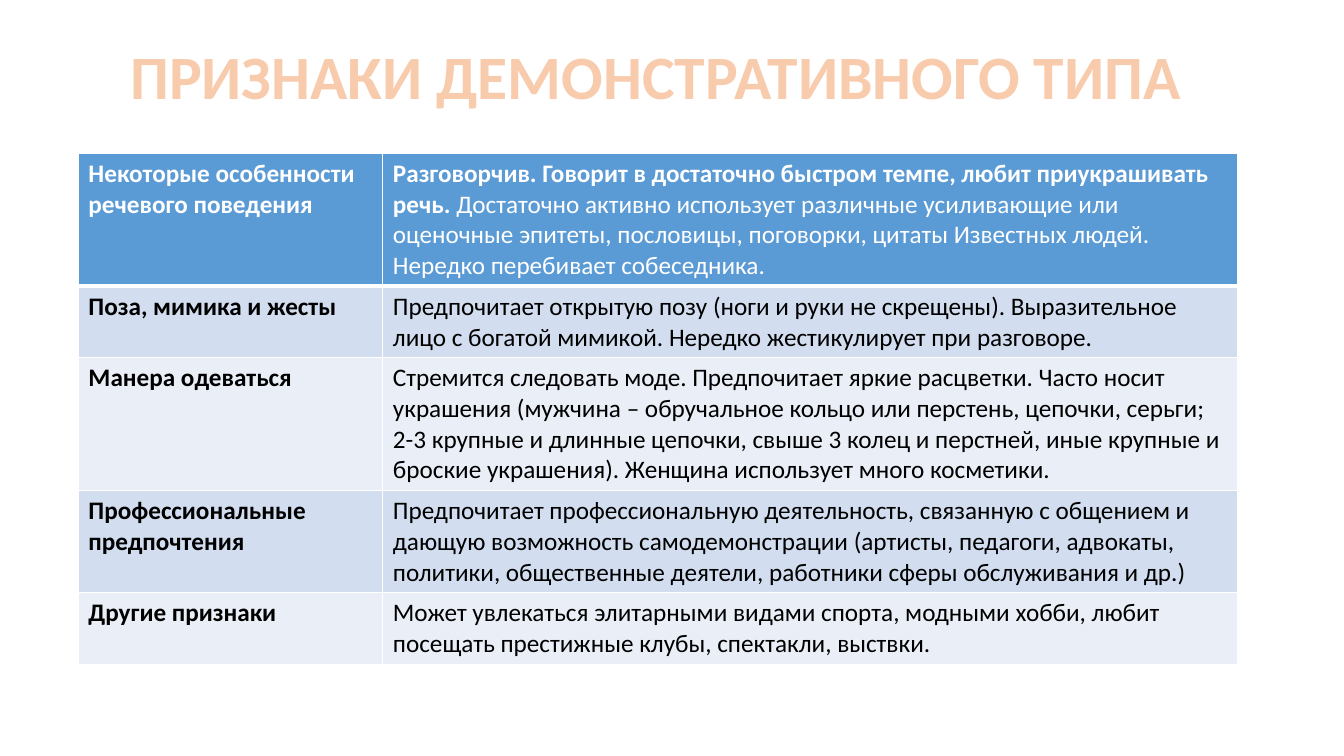
from lxml import etree
from pptx import Presentation
from pptx import util as u
from pptx.dml.color import RGBColor
from pptx.enum import text
from pptx.oxml import ns

COLORS = {
    "title": "F8CBAD", "title_outline": "ED7D31",
    "header": "5B9BD5", "band_dark": "D2DEEF", "band_light": "EAEFF7",
    "white": "FFFFFF", "black": "000000",
}

TITLE = "ПРИЗНАКИ ДЕМОНСТРАТИВНОГО ТИПА"

# Each trait: label, description as (text, bold) runs, number of text lines
TRAITS = [
    ("Некоторые особенности речевого поведения",
     [("Разговорчив. Говорит в достаточно быстром темпе, любит приукрашивать речь. ", True),
      ("Достаточно активно использует различные усиливающие или оценочные эпитеты, "
       "пословицы, поговорки, цитаты Известных людей. Нередко перебивает собеседника.", False)], 4),
    ("Поза, мимика и жесты",
     [("Предпочитает открытую позу (ноги и руки не скрещены). Выразительное лицо "
       "с богатой мимикой. Нередко жестикулирует при разговоре.", False)], 2),
    ("Манера одеваться",
     [("Стремится следовать моде. Предпочитает яркие расцветки. Часто носит украшения "
       "(мужчина – обручальное кольцо или перстень, цепочки, серьги; 2-3 крупные и длинные "
       "цепочки, свыше 3 колец и перстней, иные крупные и броские украшения). "
       "Женщина использует много косметики.", False)], 4),
    ("Профессиональные предпочтения",
     [("Предпочитает профессиональную деятельность, связанную с общением и дающую "
       "возможность самодемонстрации (артисты, педагоги, адвокаты, политики, "
       "общественные деятели, работники сферы обслуживания и др.)", False)], 3),
    ("Другие признаки",
     [("Может увлекаться элитарными видами спорта, модными хобби, любит посещать "
       "престижные клубы, спектакли, выствки.", False)], 2),
]


class TraitSlide:
    """Holds the style and the current slide."""
    font = "Calibri"
    title_size, body_size = 44, 18
    line_height, cell_margins = 22, 7

    def __init__(self, deck):
        self.slide = deck.slides.add_slide(deck.slide_layouts[6])

    def color(self, name):
        return RGBColor.from_string(COLORS[name])

    def line(self, tag, width, color):
        ln = etree.Element(ns.qn(tag), w=str(u.Pt(width)))
        fill = etree.SubElement(ln, ns.qn("a:solidFill"))
        etree.SubElement(fill, ns.qn("a:srgbClr"), val=COLORS[color])
        return ln

    def run(self, paragraph, words, size, color, bold):
        run = paragraph.add_run()
        run.text = words
        style = {"name": self.font, "size": u.Pt(size), "bold": bold}
        for key, value in style.items():
            setattr(run.font, key, value)
        run.font.color.rgb = self.color(color)
        return run

    def title(self, words, left, top, width, height):
        box = self.slide.shapes.add_textbox(*map(u.Pt, (left, top, width, height)))
        layout = {"word_wrap": True, "vertical_anchor": text.MSO_ANCHOR.MIDDLE,
                  "margin_top": 0, "margin_bottom": 0}
        for key, value in layout.items():
            setattr(box.text_frame, key, value)
        heading = box.text_frame.paragraphs[0]
        heading.line_spacing = 0.9
        run = self.run(heading, words, self.title_size, "title", True)
        run.font._element.insert(0, self.line("a:ln", 1.75, "title_outline"))

    def cell(self, cell, runs, fill, color, bottom):
        for words, bold in runs:
            self.run(cell.text_frame.paragraphs[0], words, self.body_size, color, bold)
        cell.fill.solid()
        cell.fill.fore_color.rgb = self.color(fill)
        borders = {"a:lnL": 1, "a:lnR": 1, "a:lnT": 1, "a:lnB": bottom}
        for place, (tag, width) in enumerate(borders.items()):
            cell._tc.tcPr.insert(place, self.line(tag, width, "white"))

    def table(self, traits, left, top, widths):
        heights = [self.line_height * lines + self.cell_margins for *_, lines in traits]
        table = self.slide.shapes.add_table(
            len(traits), len(widths),
            *map(u.Pt, (left, top, sum(widths), sum(heights)))).table
        for column, width in zip(table.columns, widths):
            column.width = u.Pt(width)
        for i, (label, description, _) in enumerate(traits):
            table.rows[i].height = u.Pt(heights[i])
            if i == 0:
                look = ("header", "white", 3)
            else:
                look = ("band_dark" if i % 2 else "band_light", "black", 1)
            for j, runs in enumerate(([(label, True)], description)):
                self.cell(table.cell(i, j), runs, *look)


def main():
    deck = Presentation()
    deck.slide_width, deck.slide_height = u.Pt(960), u.Pt(540)
    traits = TraitSlide(deck)

    # Heading
    traits.title(TITLE, 86, 29, 808, 56)

    # Table of traits
    traits.table(TRAITS, 56, 109.5, (217.5, 610.5))

    deck.save("out.pptx")


if __name__ == "__main__":
    main()
